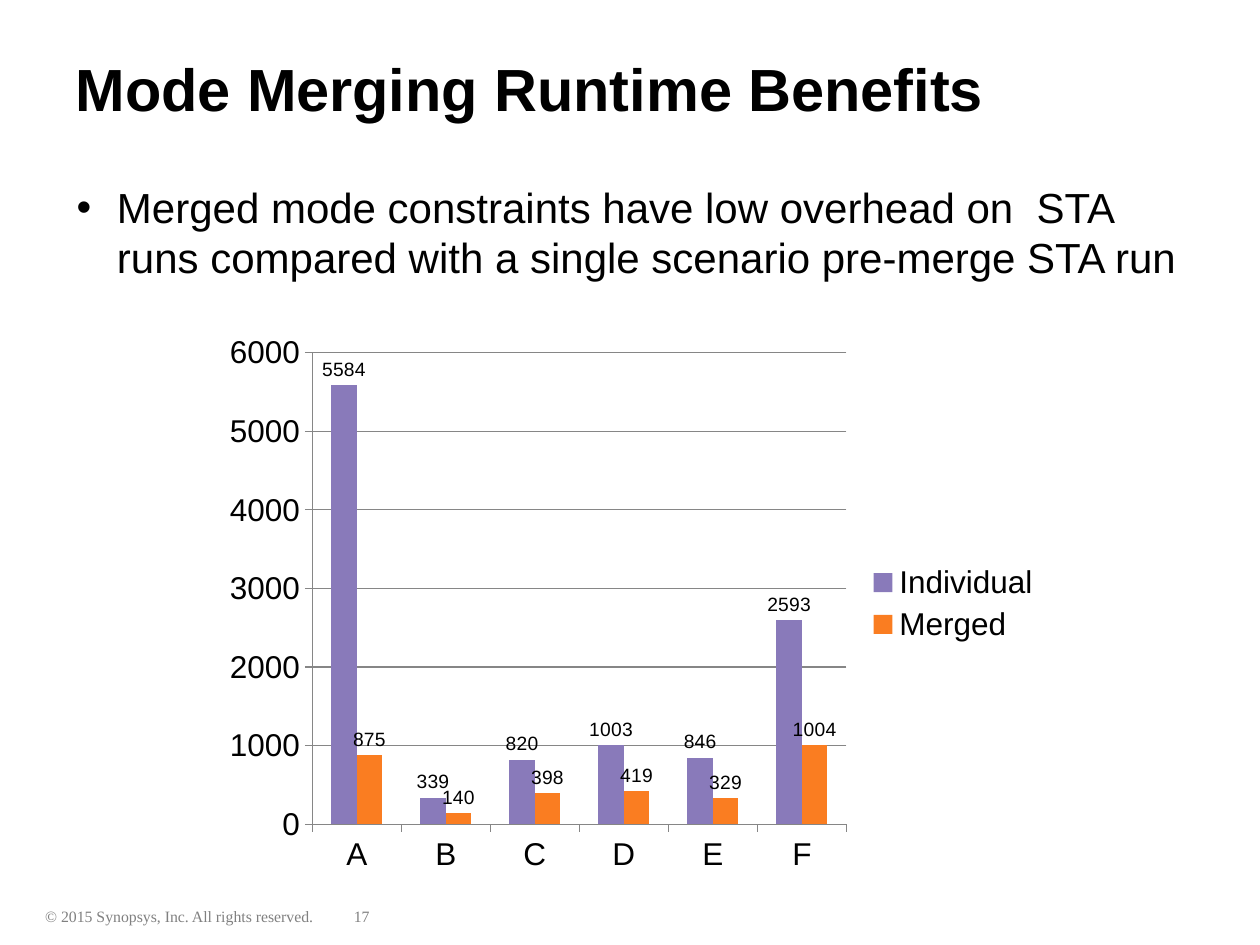
"""Build a slide that charts the runtime benefits of mode merging."""
from lxml.etree import SubElement
from pptx import Presentation
from pptx.chart.data import CategoryChartData as Data
from pptx.dml.color import RGBColor as RGB
from pptx.enum.chart import XL_CHART_TYPE as Kind
from pptx.enum.chart import XL_LABEL_POSITION as Spot
from pptx.enum.chart import XL_LEGEND_POSITION as Side
from pptx.enum.chart import XL_TICK_MARK as Tick
from pptx.enum.text import MSO_ANCHOR as Anchor
from pptx.enum.text import PP_ALIGN as Align
from pptx.oxml.ns import qn
from pptx.util import Inches, Pt

TITLE = "Mode Merging Runtime Benefits"
POINT = ("Merged mode constraints have low overhead on  STA runs "
         "compared with a single scenario pre-merge STA run")
FOOT = [
    ("© 2015 Synopsys, Inc. All rights reserved.", (0.26, 7.15, 3.08, 0.25)),
    ("17", (2.71, 7.15, 0.7, 0.25)),
]
CATS = ["A", "B", "C", "D", "E", "F"]
RUNS = [
    ("Individual", [5584, 339, 820, 1003, 846, 2593], "897ABA"),
    ("Merged", [875, 140, 398, 419, 329, 1004], "FA7D21"),
]
THEME = {
    "sans": "Arial", "serif": "Times New Roman",
    "ink": "000000", "gray": "808080", "rule": "868686",
    "title": 34, "body": 24, "chart": 18, "label": 11, "foot": 9,
}


def style(font, size, face="sans", ink="ink", bold=False):
    font.name = THEME[face]
    font.size = Pt(THEME[size])
    font.bold = bold
    font.color.rgb = RGB.from_string(THEME[ink])


def place(box):
    return [Inches(n) for n in box]


def add_text(slide, text, box):
    frame = slide.shapes.add_textbox(*place(box)).text_frame
    frame.word_wrap = True
    para = frame.paragraphs[0]
    para.text = text
    return para


def add_title(slide):
    head = slide.shapes.title
    head.left, head.top, head.width, head.height = place((0.5, 0.07, 9.5, 1.25))
    frame = head.text_frame
    frame.text = TITLE
    frame.vertical_anchor = Anchor.MIDDLE
    para = frame.paragraphs[0]
    para.alignment = Align.LEFT
    style(para.font, "title", bold=True)


def add_point(slide):
    para = add_text(slide, POINT, (0.51, 1.39, 8.99, 1.02))
    props = para._p.get_or_add_pPr()
    props.set("marL", str(Inches(0.32)))
    props.set("indent", str(-Inches(0.32)))
    SubElement(props, qn("a:buFont"), typeface=THEME["sans"])
    SubElement(props, qn("a:buChar"), char="•")
    style(para.font, "body")


def add_bars(slide):
    data = Data()
    data.categories = CATS
    for name, vals, _ in RUNS:
        data.add_series(name, vals)
    box = place((1.69, 2.57, 6.67, 4.44))
    chart = slide.shapes.add_chart(Kind.COLUMN_CLUSTERED, *box, data).chart
    style(chart.font, "chart")
    chart.has_title = False
    chart.has_legend = True
    chart.legend.position = Side.RIGHT
    chart.legend.include_in_layout = False

    rule = RGB.from_string(THEME["rule"])
    scale = chart.value_axis
    scale.minimum_scale, scale.maximum_scale, scale.major_unit = 0, 6000, 1000
    scale.has_major_gridlines = True
    lines = [scale.major_gridlines.format.line]
    for axis in (chart.category_axis, scale):
        axis.major_tick_mark = Tick.OUTSIDE
        axis.minor_tick_mark = Tick.NONE
        lines.append(axis.format.line)
    for line in lines:
        line.color.rgb = rule
        line.width = Pt(0.75)

    plot = chart.plots[0]
    plot.gap_width, plot.overlap = 150, 0
    plot.vary_by_categories = False
    for bars, (_, _, color) in zip(plot.series, RUNS):
        bars.format.fill.solid()
        bars.format.fill.fore_color.rgb = RGB.from_string(color)
        tags = bars.data_labels
        tags.show_value = True
        tags.position = Spot.OUTSIDE_END
        style(tags.font, "label")


def main():
    deck = Presentation()
    deck.slide_width, deck.slide_height = Inches(10), Inches(7.5)
    slide = deck.slides.add_slide(deck.slide_layouts[5])
    for text, box in FOOT:
        style(add_text(slide, text, box).font, "foot", "serif", "gray")
    add_title(slide)
    add_point(slide)
    add_bars(slide)
    deck.save("out.pptx")


if __name__ == "__main__":
    main()
